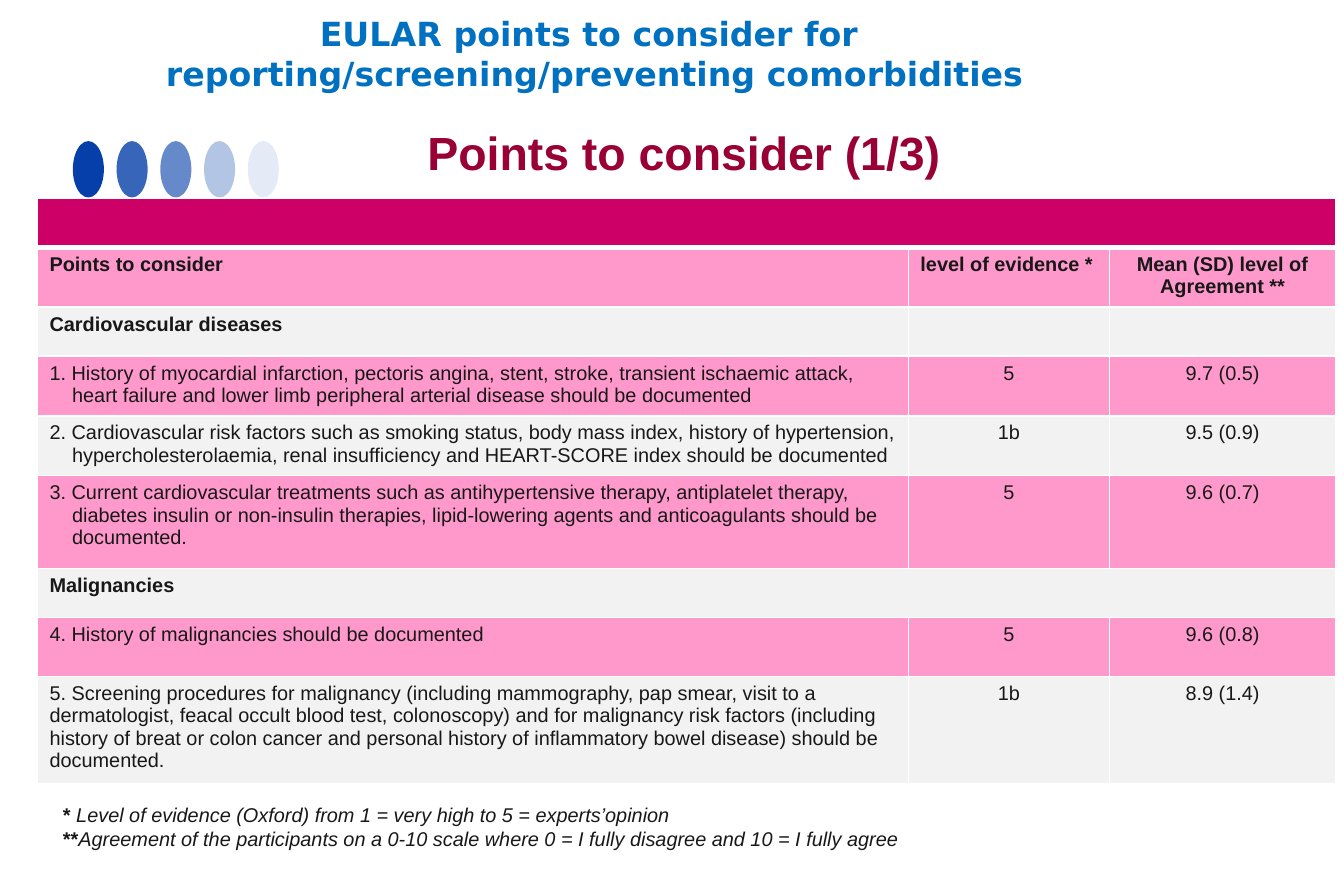
import pptx
import pptx.dml.color
import pptx.enum.shapes
import pptx.enum.text
import pptx.oxml
import pptx.oxml.ns
import pptx.util
from pptx.util import Cm

Align = pptx.enum.text.PP_ALIGN
BLUE, TITLE_BLUE, WINE = "063FA9", "0070C0", "990033"
MAGENTA, PINK, GREY, INK = "CC0066", "FF99CC", "F2F2F2", "181818"

COLUMN_WIDTHS = [18.52, 4.27, 4.82]
# Row height, points to consider, level of evidence, agreement
ROWS = [
    (1.04, "", "", ""),
    (1.25, "Points to consider", "level of evidence *", "Mean (SD) level of\nAgreement **"),
    (1.04, "Cardiovascular diseases", "", ""),
    (1.25, "1. History of myocardial infarction, pectoris angina, stent, stroke, transient "
           "ischaemic attack, heart failure and lower limb peripheral arterial disease "
           "should be documented", "5", "9.7 (0.5)"),
    (1.27, "2. Cardiovascular risk factors such as smoking status, body mass index, history "
           "of hypertension, hypercholesterolaemia, renal insufficiency and HEART-SCORE "
           "index should be documented", "1b", "9.5 (0.9)"),
    (1.98, "3. Current cardiovascular treatments such as antihypertensive therapy, "
           "antiplatelet therapy, diabetes insulin or non-insulin therapies, lipid-lowering "
           "agents and anticoagulants should be documented.", "5", "9.6 (0.7)"),
    (1.04, "Malignancies", "", ""),
    (1.25, "4. History of malignancies should be documented", "5", "9.6 (0.8)"),
    (2.29, "5. Screening procedures for malignancy (including mammography, pap smear, visit "
           "to a dermatologist, feacal occult blood test, colonoscopy) and for malignancy "
           "risk factors (including history of breat or colon cancer and personal history "
           "of inflammatory bowel disease) should be documented.", "1b", "8.9 (1.4)"),
]
BANNER_ROW, HEADER_ROW = 0, 1
MERGED_ROWS = (0, 6)
BOLD_ROWS = (1, 2, 6)
HANGING_ROWS = (3, 4, 5)

FOOTNOTES = [
    ("* ", "Level of evidence (Oxford) from 1 = very high to 5 = experts’opinion"),
    ("**", "Agreement of the participants on a 0-10 scale where 0 = I fully disagree "
           "and 10 = I fully agree"),
]


def rgb(value):
    return pptx.dml.color.RGBColor.from_string(value)


def set_font(font, size, color, bold=False, name="Arial"):
    font.name, font.size, font.bold = name, pptx.util.Pt(size), bold
    font.color.rgb = rgb(color)


def add_border(cell, side, points):
    """Draw a white line on one side (L, R, T or B) of a cell."""
    cell._tc.get_or_add_tcPr().append(pptx.oxml.parse_xml(
        f'<a:ln{side} {pptx.oxml.ns.nsdecls("a")} w="{points * 12700}">'
        f'<a:solidFill><a:srgbClr val="FFFFFF"/></a:solidFill></a:ln{side}>'))


class ComorbiditySlide:
    def __init__(self, presentation):
        self.slide = presentation.slides.add_slide(presentation.slide_layouts[5])

    def ovals(self, opacities):
        for index, opacity in enumerate(opacities):
            oval = self.slide.shapes.add_shape(
                pptx.enum.shapes.MSO_SHAPE.OVAL,
                Cm(1.55 + index * 0.93), Cm(3), Cm(0.66), Cm(1.2))
            oval.shadow.inherit = False
            oval.fill.solid()
            oval.fill.fore_color.rgb = rgb(BLUE)
            oval.line.fill.background()
            color = oval._element.spPr.find(".//" + pptx.oxml.ns.qn("a:srgbClr"))
            color.append(pptx.oxml.parse_xml(
                f'<a:alpha {pptx.oxml.ns.nsdecls("a")} val="{opacity * 1000}"/>'))

    def title(self, text):
        title = self.slide.shapes.title
        title.left, title.top, title.width, title.height = Cm(0.15), Cm(0.15), Cm(25), Cm(1.96)
        frame = title.text_frame
        frame.text = text
        frame.auto_size = pptx.enum.text.MSO_AUTO_SIZE.NONE
        frame.vertical_anchor = pptx.enum.text.MSO_ANCHOR.TOP
        for paragraph in frame.paragraphs:
            paragraph.alignment = Align.CENTER
            set_font(paragraph.font, 20, TITLE_BLUE, True, "DejaVu Sans")

    def text_box(self, left, top, width, height):
        frame = self.slide.shapes.add_textbox(
            Cm(left), Cm(top), Cm(width), Cm(height)).text_frame
        frame.word_wrap = True
        return frame

    def subtitle(self, text):
        paragraph = self.text_box(8.84, 2.51, 11.5, 1.45).paragraphs[0]
        paragraph.text = text
        set_font(paragraph.font, 28, WINE, True)

    def footnotes(self, notes):
        frame = self.text_box(1.09, 16.94, 22.66, 1.27)
        for index, (mark, note) in enumerate(notes):
            paragraph = frame.add_paragraph() if index else frame.paragraphs[0]
            set_font(paragraph.font, 12, INK)
            mark_run, note_run = paragraph.add_run(), paragraph.add_run()
            mark_run.text, note_run.text = mark, note
            mark_run.font.bold = True
            note_run.font.italic = True

    def cell(self, cell, text, row, column):
        for side in "LRTB":
            under_banner = (row, side) in ((BANNER_ROW, "B"), (HEADER_ROW, "T"))
            add_border(cell, side, 3 if under_banner else 1)
        cell.fill.solid()
        cell.fill.fore_color.rgb = rgb(
            MAGENTA if row == BANNER_ROW else PINK if row % 2 else GREY)
        if not text:
            return
        cell.text = text
        left_aligned = column == 0 or (row == HEADER_ROW and column == 1)
        for paragraph in cell.text_frame.paragraphs:
            paragraph.alignment = Align.LEFT if left_aligned else Align.CENTER
            if row in HANGING_ROWS and column == 0:
                properties = paragraph._p.get_or_add_pPr()
                properties.set("marL", str(Cm(0.48)))
                properties.set("indent", str(-Cm(0.48)))
            set_font(paragraph.font, 12, INK, row in BOLD_ROWS)

    def table(self, rows):
        heights = [row[0] for row in rows]
        table = self.slide.shapes.add_table(
            len(rows), len(COLUMN_WIDTHS), Cm(0.8), Cm(4.22),
            Cm(sum(COLUMN_WIDTHS)), Cm(sum(heights))).table
        table.first_row = table.horz_banding = False
        for column, width in zip(table.columns, COLUMN_WIDTHS):
            column.width = Cm(width)
        for row_index, (height, *texts) in enumerate(rows):
            table.rows[row_index].height = Cm(height)
            for column_index, text in enumerate(texts):
                self.cell(table.cell(row_index, column_index), text, row_index, column_index)
        for row in MERGED_ROWS:
            table.cell(row, 0).merge(table.cell(row, len(COLUMN_WIDTHS) - 1))


def main():
    presentation = pptx.Presentation()
    presentation.slide_width, presentation.slide_height = Cm(28.58), Cm(19.05)
    slide = ComorbiditySlide(presentation)
    slide.ovals([100, 80, 61, 30, 10])
    slide.title("EULAR points to consider for \nreporting/screening/preventing comorbidities")
    slide.subtitle("Points to consider (1/3)")
    slide.table(ROWS)
    slide.footnotes(FOOTNOTES)
    presentation.save("out.pptx")


if __name__ == "__main__":
    main()
